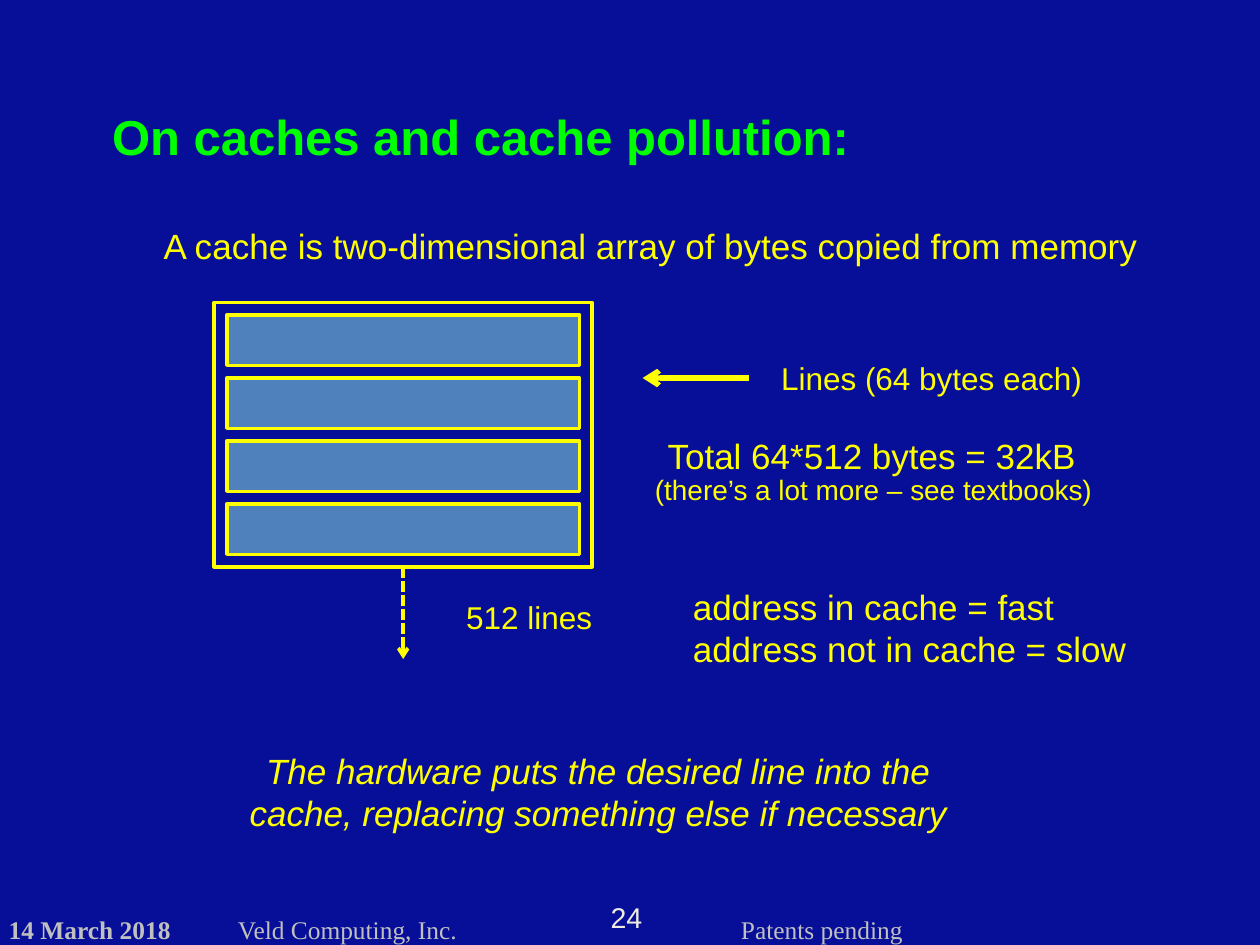
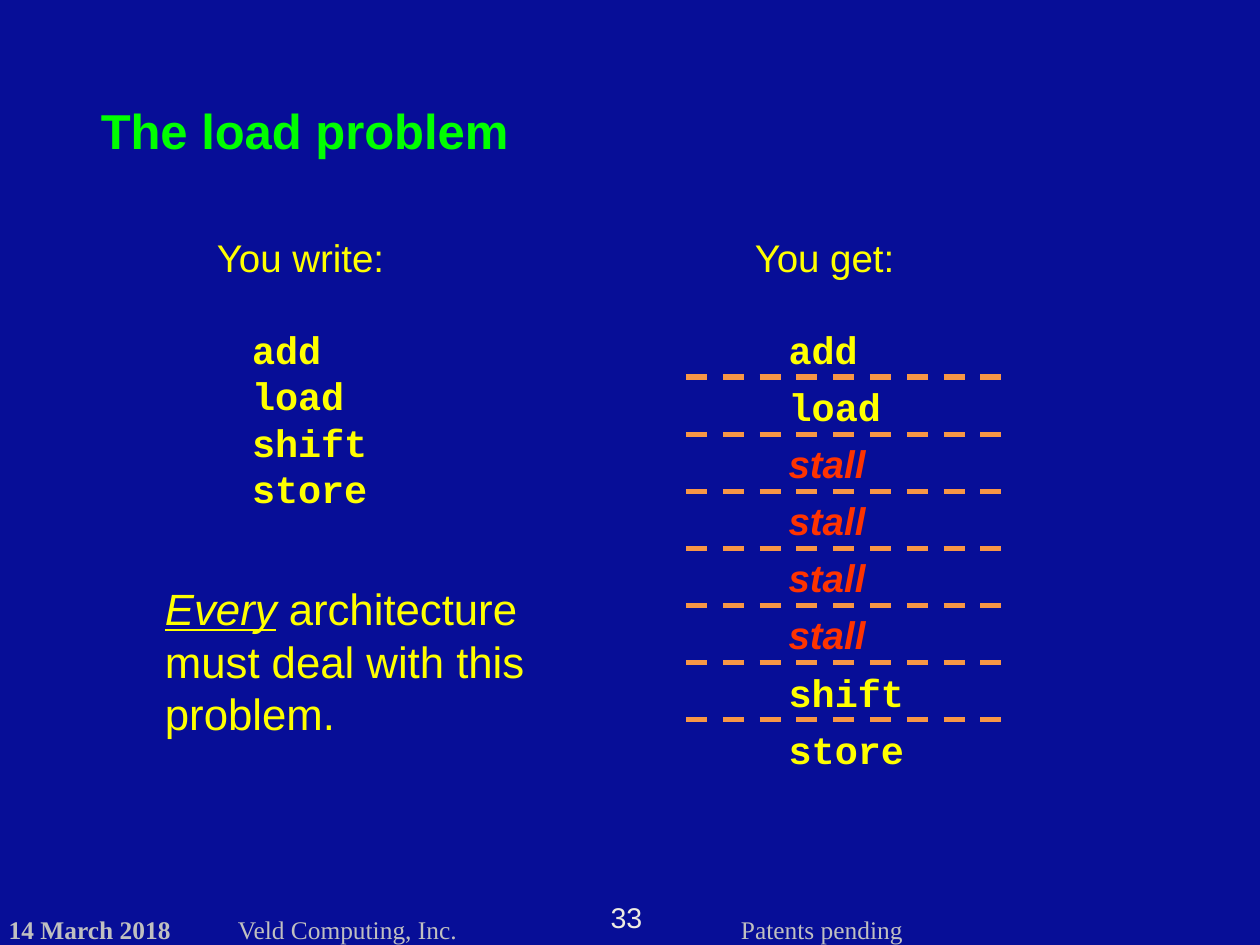
from dataclasses import dataclass

from lxml.etree import SubElement
from pptx import Presentation
from pptx.dml.color import RGBColor
from pptx.enum.dml import MSO_LINE_DASH_STYLE as Dash
from pptx.enum.shapes import MSO_CONNECTOR_TYPE as Connector, MSO_SHAPE as Shape
from pptx.enum.text import MSO_AUTO_SIZE as AutoSize, PP_ALIGN as Align
from pptx.oxml.ns import qn
from pptx.util import Pt

# Content; boxes are (left, top, width, height) in points
FOOTER_PARTS = [
    ("14 March 2018", (5, 522.4, 110, 16.6), True),
    ("Veld Computing, Inc.", (136, 522.4, 150, 16.6), False),
    ("Patents pending", (423.4, 522.4, 110, 16.6), False),
]

CACHE_TITLE = "On caches and cache pollution:"
CACHE_LABELS = [
    ("A cache is two-dimensional array of bytes copied from memory",
     (86.4, 124.6, 575.3, 31.7), 20),
    ("Lines (64 bytes each)", (439.2, 201.6, 187.9, 28.8), 18),
    ("512 lines", (259.2, 338.4, 87.1, 28.8), 18),
    ("Total 64*512 bytes = 32kB", (374.4, 244.8, 249.1, 31.7), 20),
    ("(there’s a lot more – see textbooks)", (367.2, 266.4, 268.6, 26.6), 16),
]
CACHE_SPEED = ["address in cache = fast", "address not in cache = slow"]
CACHE_SUMMARY = ("The hardware puts the desired line into the cache, "
                 "replacing something else if necessary")
CACHE_LINE_COUNT = 4

LOAD_TITLE = "The load problem"
WRITTEN_CODE = ["add", "load", "shift", "store"]
EXECUTED_CODE = ["add", "load", "stall", "stall", "stall", "stall", "shift", "store"]
LOAD_REMARK = [("Every", True), (" architecture must deal with this problem.", False)]


@dataclass(frozen=True)
class Theme:
    background: str = "070E97"
    title: str = "00FF00"
    body: str = "FFFF00"
    footer: str = "C0C0C0"
    number: str = "EEECE1"
    cache_line: str = "4F81BD"
    stall: str = "FF3300"
    cycle: str = "F79646"
    sans: str = "Arial"
    mono: str = "Courier New"
    serif: str = "Times New Roman"
    title_size: float = 28
    code_size: float = 22
    remark_size: float = 25
    body_size: float = 20
    footer_size: float = 14.5
    number_size: float = 16.3


THEME = Theme()
CODE_INSET = (6.5, 3.6)


def rgb(value):
    return RGBColor.from_string(value)


def add_text(slide, content, box, *, size=THEME.body_size, color=THEME.body,
             font=THEME.sans, bold=False, italic=False, align=Align.LEFT,
             inset=(7.2, 3.6), wrap=False):
    """Content is a string or a list of paragraphs; a paragraph is a string
    or a list of (text, emphasized) runs."""
    shape = slide.shapes.add_textbox(*map(Pt, box))
    frame = shape.text_frame
    frame.word_wrap = wrap
    frame.auto_size = AutoSize.SHAPE_TO_FIT_TEXT
    frame.margin_left = frame.margin_right = Pt(inset[0])
    frame.margin_top = frame.margin_bottom = Pt(inset[1])
    paragraphs = [content] if isinstance(content, str) else content
    for index, runs in enumerate(paragraphs):
        paragraph = frame.add_paragraph() if index else frame.paragraphs[0]
        paragraph.alignment = align
        for text, emphasized in [(runs, False)] if isinstance(runs, str) else runs:
            run = paragraph.add_run()
            run.text = text
            run.font.name = font
            run.font.size = Pt(size)
            run.font.bold = bold
            run.font.italic = italic or emphasized
            run.font.underline = emphasized
            run.font.color.rgb = rgb(color)


def add_line(shapes, start, end, *, color, width, dash=None, arrow=False):
    line = shapes.add_connector(Connector.STRAIGHT, *map(Pt, start + end))
    line.line.color.rgb = rgb(color)
    line.line.width = Pt(width)
    if dash:
        line.line.dash_style = dash
    properties = line._element.spPr
    if arrow:
        SubElement(properties.find(qn("a:ln")), qn("a:tailEnd"), type="arrow")
    SubElement(properties, qn("a:effectLst"))


def add_frame(shapes, box, fill=None):
    shape = shapes.add_shape(Shape.RECTANGLE, *map(Pt, box))
    shape.shadow.inherit = False
    if fill:
        shape.fill.solid()
        shape.fill.fore_color.rgb = rgb(fill)
    else:
        shape.fill.background()
    shape.line.color.rgb = rgb(THEME.body)
    shape.line.width = Pt(2)


def new_slide(presentation, number, title, title_box, title_inset):
    slide = presentation.slides.add_slide(presentation.slide_layouts[6])
    slide.background.fill.solid()
    slide.background.fill.fore_color.rgb = rgb(THEME.background)
    for text, box, bold in FOOTER_PARTS:
        add_text(slide, text, box, size=THEME.footer_size, color=THEME.footer,
                 font=THEME.serif, bold=bold, inset=(0, 0), wrap=True)
    add_text(slide, number, (348, 514.4, 20, 18.7), size=THEME.number_size,
             color=THEME.number, align=Align.CENTER, inset=(0, 0))
    add_text(slide, title, title_box, size=THEME.title_size, color=THEME.title,
             bold=True, inset=title_inset)
    return slide


def draw_cache(slide):
    left, top, width, height = 122.4, 172.8, 216, 151.2
    padding, line_height = 7.2, 28.8
    shapes = slide.shapes.add_group_shape().shapes
    add_frame(shapes, (left, top, width, height))
    for index in range(CACHE_LINE_COUNT):
        line_top = top + padding + index * (line_height + padding)
        add_frame(shapes, (left + padding, line_top, width - 2 * padding, line_height),
                  THEME.cache_line)
    middle, bottom = left + width / 2, top + height
    add_line(shapes, (middle, bottom), (middle, bottom + 52.6), color=THEME.body,
             width=2, dash=Dash.SQUARE_DOT, arrow=True)


def build_cache_slide(presentation):
    slide = new_slide(presentation, "24", CACHE_TITLE,
                      (57.6, 57.6, 438.5, 38.9), (6.5, 3.4))
    for text, box, size in CACHE_LABELS:
        add_text(slide, text, box, size=size)
    add_line(slide.shapes, (428, 216), (367.2, 216), color=THEME.body,
             width=3, arrow=True)
    draw_cache(slide)
    add_text(slide, CACHE_SPEED, (388.8, 331.2, 281.5, 55.4), wrap=True)
    add_text(slide, CACHE_SUMMARY, (122.4, 424.8, 439.2, 55.4), italic=True,
             align=Align.CENTER, wrap=True)


def build_load_slide(presentation):
    slide = new_slide(presentation, "33", LOAD_TITLE, (57.6, 57.6, 244, 33.8), (0, 0))
    heading = dict(size=THEME.code_size, inset=CODE_INSET)
    code = dict(heading, font=THEME.mono, bold=True)
    stall = dict(heading, color=THEME.stall, bold=True, italic=True)

    add_text(slide, "You write:", (117.4, 130.3, 108.7, 33.1), **heading)
    add_text(slide, "You get:", (424.8, 130.3, 92.9, 33.1), **heading)
    code_top, row_pitch = 182.9, 32.6
    add_text(slide, WRITTEN_CODE, (137.5, code_top, 79.9, 113), **code)

    for index, operation in enumerate(EXECUTED_CODE):
        row_top = code_top + index * row_pitch
        if index:
            add_line(slide.shapes, (392, row_top), (572, row_top),
                     color=THEME.cycle, width=3, dash=Dash.DASH)
        is_stall = operation == "stall"
        width = 57.6 if is_stall else 13.2 * len(operation) + 13
        add_text(slide, operation, (444.2, row_top, width, 33.1),
                 **(stall if is_stall else code))

    add_text(slide, [LOAD_REMARK], (87.8, 329, 222.5, 98.6), size=THEME.remark_size,
             inset=CODE_INSET, wrap=True)


def main():
    presentation = Presentation()
    presentation.slide_width, presentation.slide_height = Pt(720), Pt(540)
    build_cache_slide(presentation)
    build_load_slide(presentation)
    presentation.save("out.pptx")


if __name__ == "__main__":
    main()
